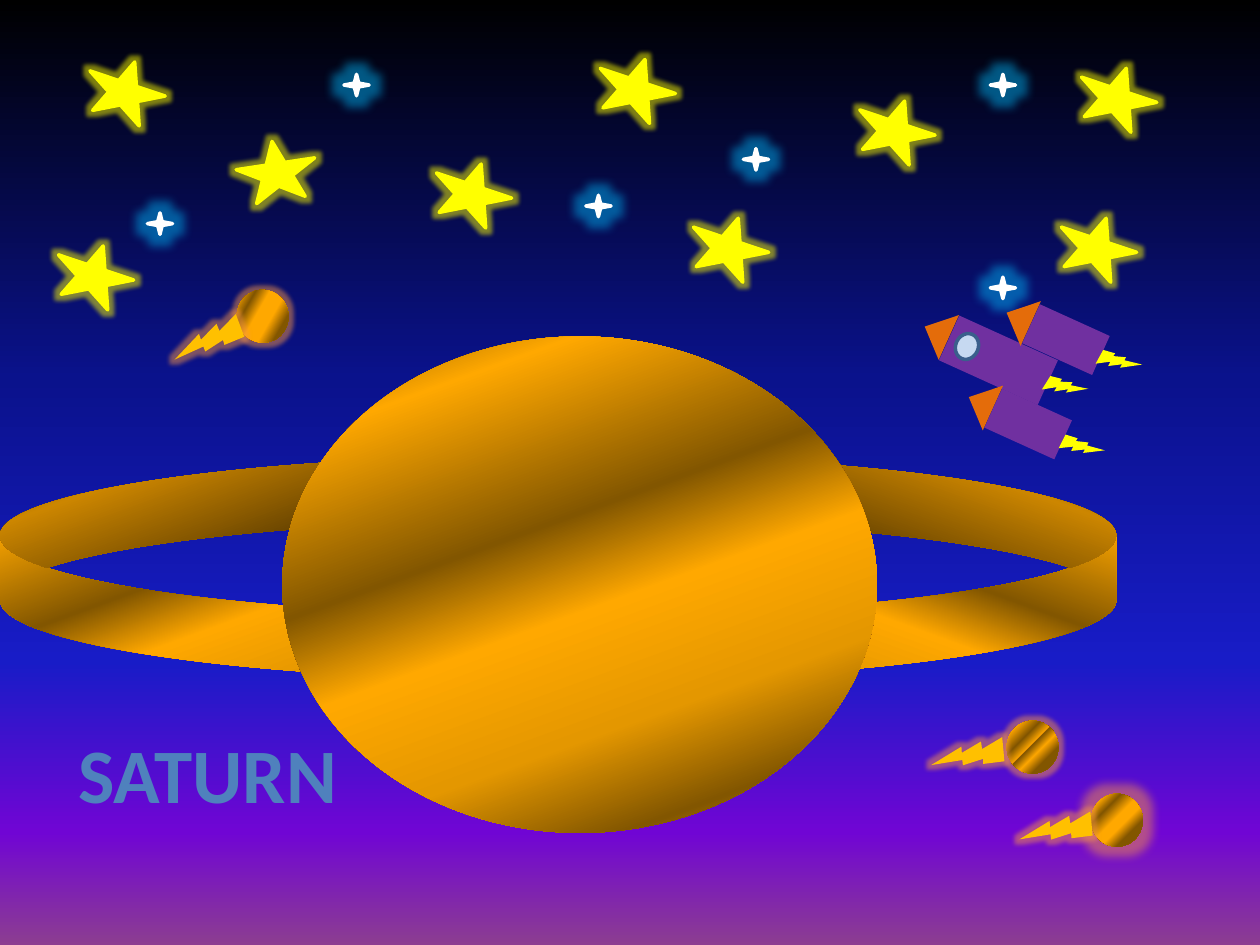
"""Build a Saturn slide with stars, comets and a rocket on a night-sky gradient."""
from lxml import etree
from pptx import Presentation
from pptx.dml.color import RGBColor
from pptx.enum.shapes import MSO_SHAPE
from pptx.enum.text import MSO_AUTO_SIZE, PP_ALIGN
from pptx.oxml.ns import qn
from pptx.util import Inches, Pt

RING, BALL = MSO_SHAPE.CURVED_RIGHT_ARROW, MSO_SHAPE.OVAL
STAR, TWINKLE = MSO_SHAPE.STAR_5_POINT, MSO_SHAPE.STAR_4_POINT
BOLT, BODY, NOSE = MSO_SHAPE.LIGHTNING_BOLT, MSO_SHAPE.RECTANGLE, MSO_SHAPE.ISOSCELES_TRIANGLE
CENTER, GROW = PP_ALIGN.CENTER, MSO_AUTO_SIZE.SHAPE_TO_FIT_TEXT

YELLOW = RGBColor(0xFF, 0xFF, 0x00)
WHITE = RGBColor(0xFF, 0xFF, 0xFF)
CYAN = RGBColor(0x00, 0xB0, 0xF0)
BROWN = RGBColor(0x82, 0x56, 0x00)
GOLD = RGBColor(0xFF, 0xA8, 0x00)
OCHRE = RGBColor(0xE4, 0x97, 0x00)
AMBER = RGBColor(0xFF, 0xC0, 0x00)
ORANGE = RGBColor(0xF7, 0x96, 0x46)
RUST = RGBColor(0xE4, 0x6C, 0x0A)
PURPLE = RGBColor(0x70, 0x30, 0xA0)
GLASS = RGBColor(0xC6, 0xD9, 0xF1)
STEEL = RGBColor(0x3A, 0x5F, 0x8C)
BLUE = RGBColor(0x4F, 0x81, 0xBD)
BLACK = RGBColor(0x00, 0x00, 0x00)
NAVY = RGBColor(0x0A, 0x12, 0x8C)
ROYAL = RGBColor(0x18, 0x1C, 0xC7)
VIOLET = RGBColor(0x70, 0x05, 0xD4)
MAUVE = RGBColor(0x8C, 0x3D, 0x91)

SKY = [(0, BLACK), (40, NAVY), (70, ROYAL), (88, VIOLET), (100, MAUVE)], 90
SATURN = [(0, BROWN), (15, GOLD), (40, BROWN), (54, GOLD),
          (72, OCHRE), (87, BROWN), (100, GOLD)], 70
ROCK_END = [(60, GOLD), (75, BROWN), (87, BROWN), (100, GOLD)]
ROCK_START = [(0, BROWN), (14, GOLD)]
ROCK_LOW = ROCK_START + [(29, BROWN), (47, GOLD)] + ROCK_END, 45
ROCK_MID = ROCK_START + [(33, BROWN), (47, GOLD), (48, BROWN)] + ROCK_END, 45
ROCK_HIGH = ROCK_START + [(29, BROWN), (43, GOLD)] + ROCK_END, 45

prs = Presentation()
prs.slide_width, prs.slide_height = Inches(10), Inches(7.5)
COL, ROW = prs.slide_width / 100, prs.slide_height / 75
s = prs.slides.add_slide(prs.slide_layouts[6])


def set_gradient(fill, element, stops, angle):
    fill.gradient()
    fill.gradient_angle = 360 - angle
    gs_list = element.find(".//" + qn("a:gsLst"))
    for old in list(gs_list):
        gs_list.remove(old)
    for pos, color in stops:
        gs = etree.SubElement(gs_list, qn("a:gs"), pos=str(pos * 1000))
        etree.SubElement(gs, qn("a:srgbClr"), val=str(color))


def add(shapes, kind, box, fill, rot=0, flip=False, line=None, glow=None):
    x, y, w, h = box
    sp = shapes.add_shape(kind, int(x * COL), int(y * ROW), int(w * COL), int(h * ROW))
    sp.rotation = rot
    sp.shadow.inherit = False
    if isinstance(fill, tuple) and not isinstance(fill, RGBColor):
        set_gradient(sp.fill, sp.element, *fill)
    else:
        sp.fill.solid()
        sp.fill.fore_color.rgb = fill
    if line is None:
        sp.line.fill.background()
    else:
        sp.line.color.rgb = line
        sp.line.width = Pt(2)
    if flip:
        sp.element.find(".//" + qn("a:xfrm")).set("flipH", "1")
    if glow:
        color, radius = glow
        effects = sp.element.find(".//" + qn("a:effectLst"))
        g = etree.SubElement(effects, qn("a:glow"), rad=str(Pt(radius)))
        clr = etree.SubElement(g, qn("a:srgbClr"), val=str(color))
        etree.SubElement(clr, qn("a:alpha"), val="50000")


set_gradient(s.background.fill, s.element, *SKY)

planet = s.shapes.add_group_shape().shapes
add(planet, RING, (45, 36.1, 43.6, 20.5), SATURN, flip=True)
add(planet, RING, (0, 36.1, 45, 20.5), SATURN)
add(planet, BALL, (22.4, 26.7, 47.2, 39.4), SATURN)

tb = s.shapes.add_textbox(int(4.3 * COL), int(57.2 * ROW), int(24.4 * COL), int(8.4 * ROW))
tf = tb.text_frame
tf.word_wrap = True
tf.auto_size = GROW
p = tf.paragraphs[0]
p.alignment = CENTER
r = p.add_run()
r.text = "SATURN"
for name, value in {"name": "Calibri", "size": Pt(44), "bold": True}.items():
    setattr(r.font, name, value)
r.font.color.rgb = BLUE

stars = s.shapes.add_group_shape().shapes
add(stars, STAR, (18.8, 11.2, 6.3, 4.7), YELLOW, 351.4, True, YELLOW, (YELLOW, 5))
for x, y in [(67.9, 7.9), (47.3, 4.6), (85.5, 5.3), (4.3, 19.4),
             (83.9, 17.2), (34.3, 12.9), (6.8, 4.8), (54.7, 17.2)]:
    add(stars, STAR, (x, y, 6.3, 4.7), YELLOW, 18.5, True, YELLOW, (YELLOW, 5))
for x, y in [(59, 11.8), (11.7, 16.9), (78.6, 5.9), (27.3, 5.9), (78.6, 22), (46.5, 15.5)]:
    add(stars, TWINKLE, (x, y, 2, 1.7), WHITE, line=WHITE, glow=(CYAN, 11))

add(s.shapes, BALL, (86.6, 63, 4.1, 4.2), ROCK_LOW, glow=(ORANGE, 11))
comet = s.shapes.add_group_shape().shapes
add(comet, BALL, (79.9, 57.2, 4.1, 4.2), ROCK_MID, glow=(ORANGE, 5))
add(comet, BOLT, (75, 57.2, 4.3, 5.2), AMBER, 113.7, glow=(ORANGE, 5))
add(s.shapes, BOLT, (82, 63.1, 4.3, 5.2), AMBER, 113.7, glow=(ORANGE, 5))
comet = s.shapes.add_group_shape().shapes
add(comet, BALL, (18.8, 23, 4.1, 4.2), ROCK_HIGH, 344.8, glow=(ORANGE, 5))
add(comet, BOLT, (14.6, 24.2, 4.3, 5.2), AMBER, 98.5, glow=(ORANGE, 5))

rocket = s.shapes.add_group_shape().shapes
TILT = 294.4
for box in [(79.9, 30.6, 3.4, 6.1), (77.3, 24.3, 3.9, 8.6), (82.9, 23.9, 3.4, 6.1)]:
    add(rocket, BODY, box, PURPLE, TILT)
for x, y in [(75.9, 30.9), (78.9, 24.2), (72.4, 25.3)]:
    add(rocket, NOSE, (x, y, 3.9, 2.1), RUST, TILT)
add(rocket, BALL, (75.7, 26.6, 2.1, 1.8), GLASS, TILT, line=STEEL)
for box, rot in [((84.3, 34, 2.8, 2.9), 322.2), ((82.9, 29.4, 3, 2.6), 323.7),
                 ((87.2, 27.3, 2.9, 2.8), 322.8)]:
    add(rocket, BOLT, box, YELLOW, rot)

prs.save("out.pptx")
